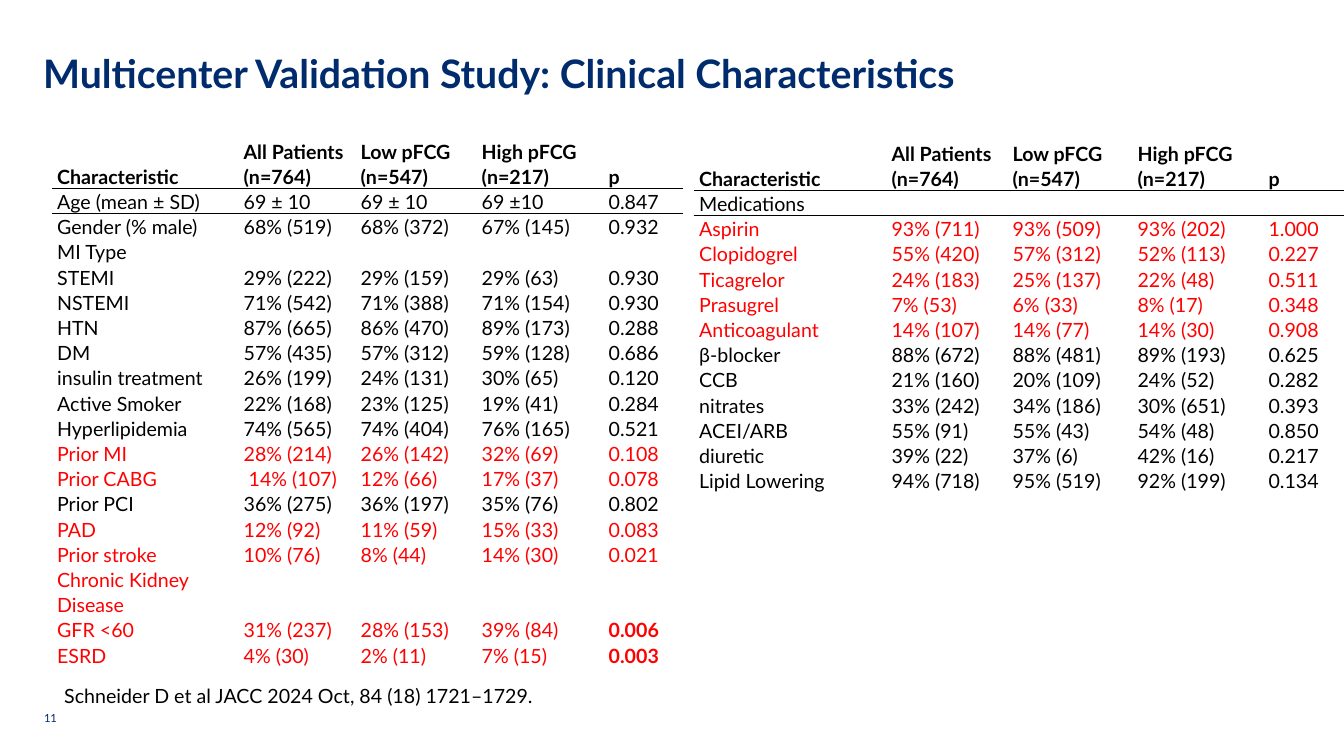
from dataclasses import dataclass

import lxml.etree
import pptx
import pptx.dml.color
import pptx.enum.shapes
import pptx.enum.text
import pptx.oxml.ns
import pptx.util

Cm = pptx.util.Cm
Pt = pptx.util.Pt
qn = pptx.oxml.ns.qn
MIDDLE = pptx.enum.text.MSO_ANCHOR.MIDDLE

FONT = "Lato"
NAVY, BLACK, RED, WHITE = "002C6E", "000000", "FF0000", "FFFFFF"
BODY_SIZE = 14
LINE_HEIGHT = 0.635
PLAIN_TABLE_STYLE = "{2D5ABB26-0587-4C30-8999-92F81FD0307C}"


@dataclass
class Row:
    characteristic: str
    all_patients: str = ""
    low: str = ""
    high: str = ""
    p: str = ""
    color: str = BLACK
    lines: int = 1

    def texts(self) -> list[str]:
        return [self.characteristic, self.all_patients, self.low, self.high, self.p]


@dataclass
class Panel:
    left: float
    top: float
    widths: list[float]
    rows: list[Row]
    closing_height: float = 0  # height of an empty last row, if any


HEADER = Row("Characteristic", "All Patients\n(n=764)", "Low pFCG\n(n=547)",
             "High pFCG\n(n=217)", "p", lines=2)

PANELS = [
    Panel(1.3, 3.48, [4.7, 2.95, 3.05, 3.2, 2.01], [
        Row("Age (mean ± SD)", "69 ± 10", "69 ± 10", "69 ±10", "0.847"),
        Row("Gender (% male)", "68% (519)", "68% (372)", "67% (145)", "0.932"),
        Row("MI Type"),
        Row("STEMI", "29% (222)", "29% (159)", "29% (63)", "0.930"),
        Row("NSTEMI", "71% (542)", "71% (388)", "71% (154)", "0.930"),
        Row("HTN", "87% (665)", "86% (470)", "89% (173)", "0.288"),
        Row("DM", "57% (435)", "57% (312)", "59% (128)", "0.686"),
        Row("insulin treatment", "26% (199)", "24% (131)", "30% (65)", "0.120"),
        Row("Active Smoker", "22% (168)", "23% (125)", "19% (41)", "0.284"),
        Row("Hyperlipidemia", "74% (565)", "74% (404)", "76% (165)", "0.521"),
        Row("Prior MI", "28% (214)", "26% (142)", "32% (69)", "0.108", RED),
        Row("Prior CABG", " 14% (107)", "12% (66)", "17% (37)", "0.078", RED),
        Row("Prior PCI", "36% (275)", "36% (197)", "35% (76)", "0.802"),
        Row("PAD", "12% (92)", "11% (59)", "15% (33)", "0.083", RED),
        Row("Prior stroke", "10% (76)", "8% (44)", "14% (30)", "0.021", RED),
        Row("Chronic Kidney Disease", color=RED, lines=2),
        Row("GFR <60", "31% (237)", "28% (153)", "39% (84)", "0.006", RED),
        Row("ESRD", "4% (30)", "2% (11)", "7% (15)", "0.003", RED),
    ], closing_height=0.33),
    Panel(17.48, 3.53, [4.85, 3.05, 3.15, 3.3, 2.06], [
        Row("Medications"),
        Row("Aspirin", "93% (711)", "93% (509)", "93% (202)", "1.000", RED),
        Row("Clopidogrel", "55% (420)", "57% (312)", "52% (113)", "0.227", RED),
        Row("Ticagrelor", "24% (183)", "25% (137)", "22% (48)", "0.511", RED),
        Row("Prasugrel", "7% (53)", "6% (33)", "8% (17)", "0.348", RED),
        Row("Anticoagulant", "14% (107)", "14% (77)", "14% (30)", "0.908", RED),
        Row("β-blocker", "88% (672)", "88% (481)", "89% (193)", "0.625"),
        Row("CCB", "21% (160)", "20% (109)", "24% (52)", "0.282"),
        Row("nitrates", "33% (242)", "34% (186)", "30% (651)", "0.393"),
        Row("ACEI/ARB", "55% (91)", "55% (43)", "54% (48)", "0.850"),
        Row("diuretic", "39% (22)", "37% (6)", "42% (16)", "0.217"),
        Row("Lipid Lowering", "94% (718)", "95% (519)", "92% (199)", "0.134"),
    ]),
]


def rgb(color: str) -> pptx.dml.color.RGBColor:
    return pptx.dml.color.RGBColor.from_string(color)


def add_text(paragraph, text: str, size: float, color: str, bold: bool = False) -> None:
    """Add one run per line of text, with line breaks between them."""
    for index, line in enumerate(text.split("\n")):
        if index:
            paragraph.add_line_break()
        run = paragraph.add_run()
        run.text = line
        run.font.name = FONT
        run.font.size = Pt(size)
        run.font.bold = bold
        run.font.color.rgb = rgb(color)


def add_border(cell, side: str) -> None:
    line = lxml.etree.SubElement(cell._tc.get_or_add_tcPr(), qn(f"a:{side}"), w=str(Pt(1)))
    fill = lxml.etree.SubElement(line, qn("a:solidFill"))
    lxml.etree.SubElement(fill, qn("a:srgbClr"), val=BLACK)


def fill_cell(cell, text: str, color: str, bold: bool, empty_size: float) -> None:
    cell.fill.background()
    cell.vertical_anchor = pptx.enum.text.MSO_ANCHOR.BOTTOM
    cell.margin_left = cell.margin_right = Cm(0.14)
    cell.margin_top = cell.margin_bottom = 0
    paragraph = cell.text_frame.paragraphs[0]
    if text:
        paragraph.line_spacing = 1.07
        add_text(paragraph, text, BODY_SIZE, color, bold)
    else:
        lxml.etree.SubElement(paragraph._p, qn("a:endParaRPr"), sz=str(int(empty_size * 100)))


def add_panel(slide, panel: Panel) -> None:
    rows = [HEADER, *panel.rows]
    heights = [row.lines * LINE_HEIGHT for row in rows]
    if panel.closing_height:
        rows.append(Row(""))
        heights.append(panel.closing_height)
    table = slide.shapes.add_table(
        len(rows), len(panel.widths), Cm(panel.left), Cm(panel.top),
        Cm(sum(panel.widths)), Cm(sum(heights))).table
    table.first_row = table.horz_banding = False
    table._tbl.tblPr.find(qn("a:tableStyleId")).text = PLAIN_TABLE_STYLE
    for column, width in zip(table.columns, panel.widths):
        column.width = Cm(width)
    for r, (row, height) in enumerate(zip(rows, heights)):
        table.rows[r].height = Cm(height)
        empty_size = BODY_SIZE if row.characteristic else 6
        for c, text in enumerate(row.texts()):
            cell = table.cell(r, c)
            if r < 2:
                add_border(cell, "lnT" if r else "lnB")
            significant = text == row.p and text.startswith("0.00")
            fill_cell(cell, text, row.color, row is HEADER or significant, empty_size)


def add_label(slide, left: float, top: float, width: float, height: float):
    """Add a wrapping text box and return its text frame."""
    frame = slide.shapes.add_textbox(Cm(left), Cm(top), Cm(width), Cm(height)).text_frame
    frame.word_wrap = True
    return frame


def add_page_number(slide, number: str) -> None:
    box = slide.shapes.add_shape(pptx.enum.shapes.MSO_SHAPE.RECTANGLE,
                                 Cm(0.86), Cm(17.58), Cm(0.86), Cm(1.02))
    box.shadow.inherit = False
    box.fill.solid()
    box.fill.fore_color.rgb = rgb(WHITE)
    box.line.fill.background()
    frame = box.text_frame
    frame.vertical_anchor = MIDDLE
    frame.margin_right = 0
    frame.paragraphs[0].alignment = pptx.enum.text.PP_ALIGN.LEFT
    add_text(frame.paragraphs[0], number, 8, NAVY)


def main() -> None:
    presentation = pptx.Presentation()
    presentation.slide_width = Cm(33.87)
    presentation.slide_height = Cm(19.05)
    slide = presentation.slides.add_slide(presentation.slide_layouts[6])

    add_page_number(slide, "11")
    title = add_label(slide, 0.84, 0.64, 33.02, 2.54)
    title.vertical_anchor = MIDDLE
    title.paragraphs[0].line_spacing = 0.9
    add_text(title.paragraphs[0], "Multicenter Validation Study: Clinical Characteristics",
             28, NAVY, True)
    for panel in PANELS:
        add_panel(slide, panel)
    citation = add_label(slide, 1.37, 17.12, 23.37, 0.86)
    add_text(citation.paragraphs[0], "Schneider D et al JACC 2024 Oct, 84 (18) 1721–1729.",
             BODY_SIZE, BLACK)

    presentation.save("out.pptx")


if __name__ == "__main__":
    main()
